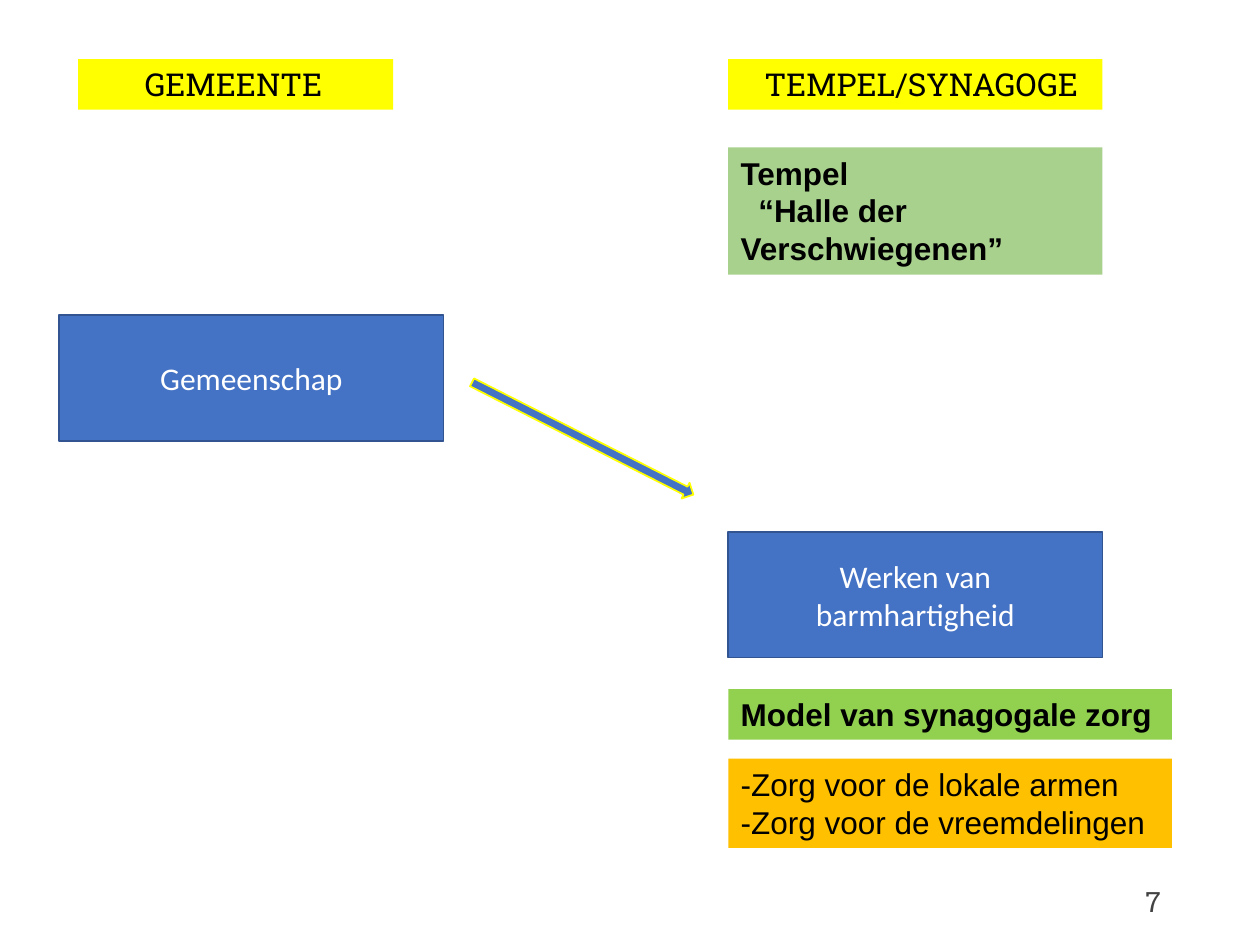
from pptx import Presentation
from pptx.dml.color import RGBColor
from pptx.enum.shapes import MSO_SHAPE as Shape
from pptx.enum.text import MSO_ANCHOR as Anchor, PP_ALIGN as Align
from pptx.util import Pt

EMU_PER_PX = 9144  # 100 px to the inch
BLUE, DARK_BLUE, YELLOW = "4472C4", "325491", "FFFF00"
HEADING = {"name": "Roboto Slab", "size": Pt(18)}
BODY = {"name": "Arial", "size": Pt(18)}
BOLD = {**BODY, "bold": True}
BOX = {"name": "Calibri", "size": Pt(18)}
NUMBER = {"name": "Roboto Slab", "size": Pt(16)}


def px(length):
    return round(length * EMU_PER_PX)


def color(value):
    return RGBColor.from_string(value)


class SlideBuilder:
    def __init__(self, slide):
        self.slide = slide

    def shape(self, kind, place, fill, line=None):
        shape = self.slide.shapes.add_shape(kind, *map(px, place))
        shape.shadow.inherit = False
        shape.fill.solid()
        shape.fill.fore_color.rgb = color(fill)
        if line:
            shape.line.color.rgb = color(line)
            shape.line.width = Pt(1)
        else:
            shape.line.fill.background()
        return shape

    def set_text(self, shape, lines, font, ink="000000", align=Align.LEFT,
                 anchor=Anchor.TOP):
        """Fill a shape with (text, first-line indent in px) pairs."""
        frame = shape.text_frame
        frame.word_wrap = True
        frame.vertical_anchor = anchor
        for index, (text, indent) in enumerate(lines):
            paragraph = frame.add_paragraph() if index else frame.paragraphs[0]
            paragraph.alignment = align
            if indent:
                paragraph._p.get_or_add_pPr().set("indent", str(px(indent)))
            run = paragraph.add_run()
            run.text = text
            for name, value in font.items():
                setattr(run.font, name, value)
            run.font.color.rgb = color(ink)

    def label(self, place, fill, lines, font):
        self.set_text(self.shape(Shape.RECTANGLE, place, fill), lines, font)

    def box(self, place, text):
        shape = self.shape(Shape.RECTANGLE, place, BLUE, DARK_BLUE)
        self.set_text(shape, [(text, 0)], BOX, "FFFFFF", Align.CENTER, Anchor.MIDDLE)

    def arrow(self, place, rotation):
        self.shape(Shape.RIGHT_ARROW, place, BLUE, YELLOW).rotation = rotation

    def page_number(self, place, text):
        shape = self.slide.shapes.add_textbox(*map(px, place))
        self.set_text(shape, [(text, 0)], NUMBER, "424242", Align.RIGHT, Anchor.MIDDLE)


def main():
    presentation = Presentation()
    presentation.slide_width, presentation.slide_height = px(1000), px(750)
    builder = SlideBuilder(
        presentation.slides.add_slide(presentation.slide_layouts[6]))
    right = 578

    builder.box((47, 250, 305, 100), "Gemeenschap")
    builder.label((62, 47, 250, 40), YELLOW, [("GEMEENTE", 43)], HEADING)
    builder.box((right, 422, 297, 100), "Werken van barmhartigheid")
    builder.label((right, 47, 297, 40), YELLOW, [("TEMPEL/SYNAGOGE", 19)], HEADING)
    builder.arrow((364, 341, 197, 14), 26.9)
    builder.label((right, 547, 352, 40), "92D050",
                  [("Model van synagogale zorg", 0)], BOLD)
    builder.label((right, 602, 352, 71), "FFC000",
                  [("-Zorg voor de lokale armen", 0),
                   ("-Zorg voor de vreemdelingen", 0)], BODY)
    builder.label((right, 117, 297, 101), "A9D18E",
                  [("Tempel", 0), ("“Halle der Verschwiegenen”", 14)], BOLD)
    builder.page_number((706, 695, 225, 40), "7")
    presentation.save("out.pptx")


if __name__ == "__main__":
    main()
